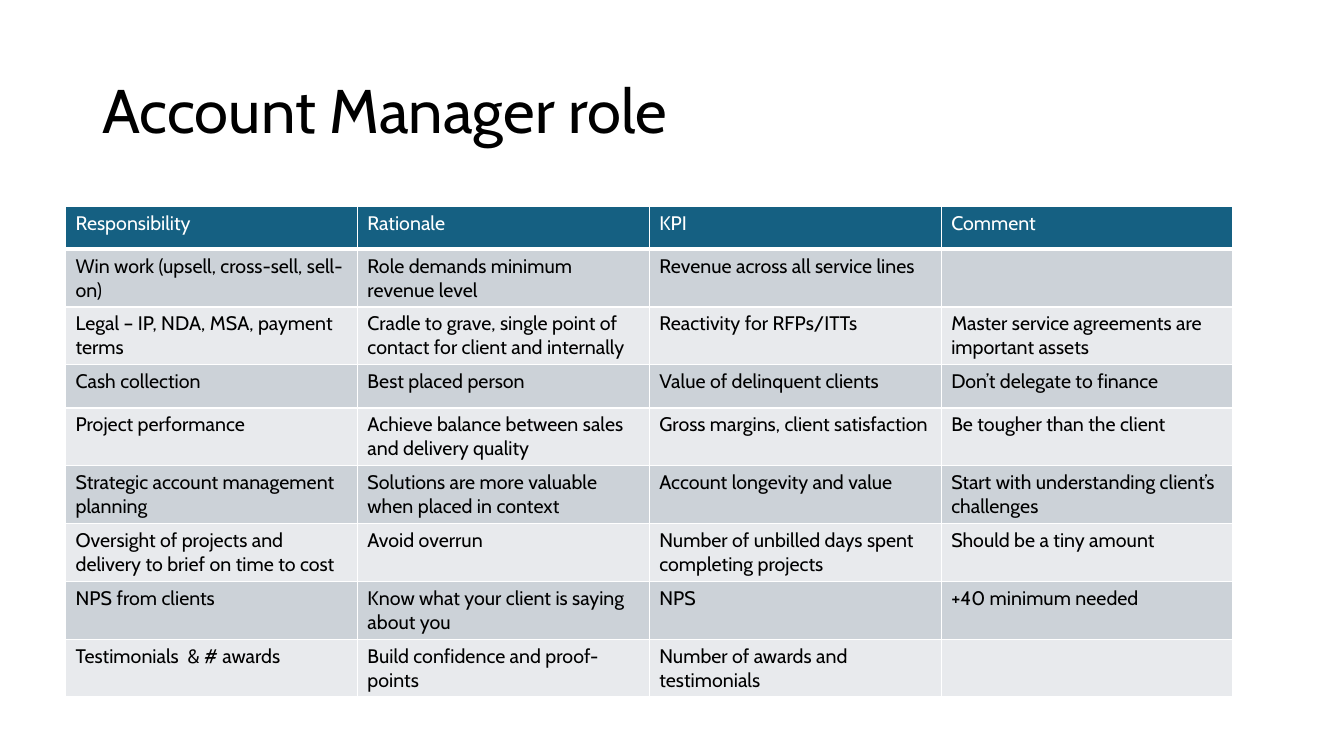
from lxml import etree
from pptx import Presentation
from pptx.dml.color import RGBColor
from pptx.enum.text import MSO_ANCHOR
from pptx.oxml.ns import qn
from pptx.util import Inches, Pt

MIDDLE = MSO_ANCHOR.MIDDLE
GRID_COLS, GRID_ROWS = 160, 120

HEADER = ["Responsibility", "Rationale", "KPI", "Comment"]
ROLES = [
    ["Win work (upsell, cross-sell, sell-on)", "Role demands minimum revenue level",
     "Revenue across all service lines", ""],
    ["Legal – IP, NDA, MSA, payment terms",
     "Cradle to grave, single point of contact for client and internally",
     "Reactivity for RFPs/ITTs", "Master service agreements are important assets"],
    ["Cash collection", "Best placed person", "Value of delinquent clients",
     "Don’t delegate to finance"],
    ["Project performance", "Achieve balance between sales and delivery quality",
     "Gross margins, client satisfaction", "Be tougher than the client"],
    ["Strategic account management planning",
     "Solutions are more valuable when placed in context",
     "Account longevity and value", "Start with understanding client’s challenges"],
    ["Oversight of projects and delivery to brief on time to cost", "Avoid overrun",
     "Number of unbilled days spent completing projects", "Should be a tiny amount"],
    ["NPS from clients", "Know what your client is saying about you", "NPS",
     "+40 minimum needed"],
    ["Testimonials  & # awards", "Build confidence and proof-points",
     "Number of awards and testimonials", ""],
]


def rgb(value):
    return RGBColor.from_string(value)


class Deck:
    font = "Cabin"
    ink = "000000"
    paper = "FFFFFF"
    header_fill = "156082"
    bands = ("CCD2D8", "E8EAED")

    def __init__(self):
        self.prs = Presentation()
        self.prs.slide_width = Inches(13.33)
        self.prs.slide_height = Inches(7.5)
        self.s = self.prs.slides.add_slide(self.prs.slide_layouts[5])
        self.s.background.fill.solid()
        self.s.background.fill.fore_color.rgb = rgb(self.paper)

    def x(self, cols):
        return round(self.prs.slide_width * cols / GRID_COLS)

    def y(self, rows):
        return round(self.prs.slide_height * rows / GRID_ROWS)

    def run(self, p, text, size, color):
        r = p.add_run()
        r.text = text
        r.font.name = self.font
        r.font.size = Pt(size)
        r.font.bold = False
        r.font.color.rgb = rgb(color)

    def title(self, text, col, row, cols, rows):
        sp = self.s.shapes.title
        sp.left, sp.top = self.x(col), self.y(row)
        sp.width, sp.height = self.x(cols), self.y(rows)
        tf = sp.text_frame
        tf.word_wrap = True
        tf.vertical_anchor = MIDDLE
        p = tf.paragraphs[0]
        p.alignment = 1
        p.line_spacing = 0.9
        self.run(p, text, 44, self.ink)

    def borders(self, cell, bottom):
        tcPr = cell._tc.get_or_add_tcPr()
        for side, width in (("L", 1), ("R", 1), ("T", 1), ("B", bottom)):
            ln = etree.SubElement(tcPr, qn(f"a:ln{side}"), w=str(Pt(width)))
            fill = etree.SubElement(ln, qn("a:solidFill"))
            etree.SubElement(fill, qn("a:srgbClr"), val=self.paper)

    def cell(self, cell, text, fill, color, bottom):
        self.borders(cell, bottom)
        cell.fill.solid()
        cell.fill.fore_color.rgb = rgb(fill)
        if text:
            self.run(cell.text_frame.paragraphs[0], text, 14, color)

    def table(self, header, body, col, row, col_width, row_height):
        n_rows, n_cols = len(body) + 1, len(header)
        table = self.s.shapes.add_table(
            n_rows, n_cols, self.x(col), self.y(row),
            self.x(col_width * n_cols), self.y(row_height * n_rows)).table
        for column in table.columns:
            column.width = self.x(col_width)
        for table_row in table.rows:
            table_row.height = self.y(row_height)
        for j, text in enumerate(header):
            self.cell(table.cell(0, j), text, self.header_fill, self.paper, 3)
        for i, texts in enumerate(body):
            for j, text in enumerate(texts):
                self.cell(table.cell(i + 1, j), text, self.bands[i % 2], self.ink, 1)


def main():
    deck = Deck()
    deck.title("Account Manager role", 11, 6.4, 138, 23.2)
    deck.table(HEADER, ROLES, 7.8, 32.7, 34.75, 6.85)
    deck.prs.save("out.pptx")


if __name__ == "__main__":
    main()
